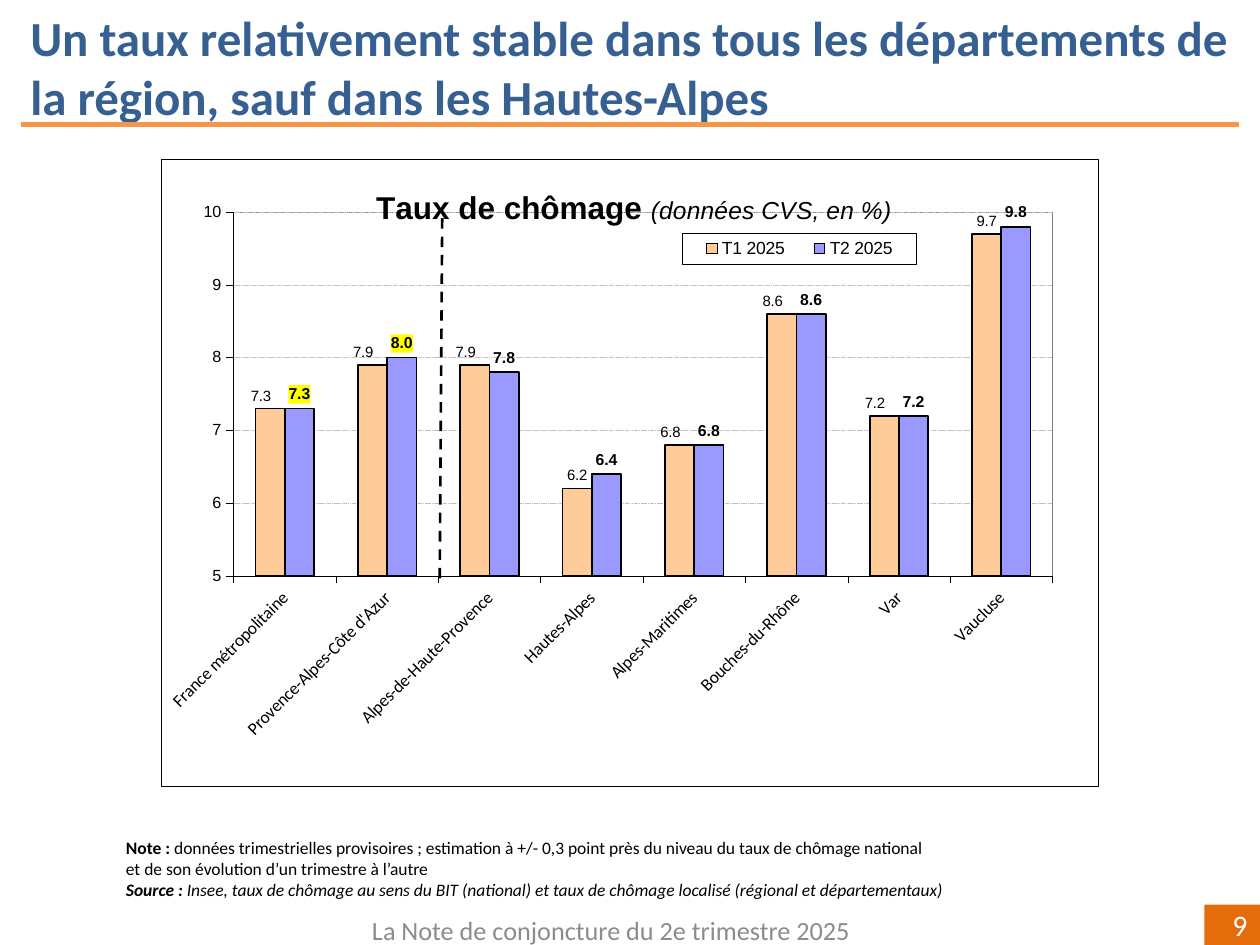
from lxml.etree import SubElement
from pptx import Presentation
from pptx.chart.data import CategoryChartData
from pptx.dml.color import RGBColor
from pptx.enum.chart import XL_CHART_TYPE as ChartType, XL_LABEL_POSITION as LabelPosition
from pptx.enum.chart import XL_LEGEND_POSITION as LegendPosition, XL_TICK_MARK as TickMark
from pptx.enum.dml import MSO_LINE as Dash
from pptx.enum.shapes import MSO_CONNECTOR as Connector, MSO_SHAPE as Shape
from pptx.enum.text import MSO_ANCHOR as Anchor, PP_ALIGN as Align
from pptx.oxml import parse_xml
from pptx.oxml.ns import nsdecls, qn
from pptx.util import Inches, Pt

BLUE = RGBColor(0x37, 0x60, 0x92)
ORANGE = RGBColor(0xF7, 0x96, 0x46)
DARK_ORANGE = RGBColor(0xE4, 0x6C, 0x0A)
PEACH = RGBColor(0xFF, 0xCC, 0x99)
LILAC = RGBColor(0x99, 0x99, 0xFF)
YELLOW = RGBColor(0xFF, 0xFF, 0x00)
GREY = RGBColor(0x8C, 0x8C, 0x8C)
GRID_GREY = RGBColor(0xC0, 0xC0, 0xC0)
FRAME_GREY = RGBColor(0x80, 0x80, 0x80)
WHITE = RGBColor(0xFF, 0xFF, 0xFF)
BLACK = RGBColor(0, 0, 0)

COLUMNS, ROWS = 100, 75
DEPARTMENTS = ["France métropolitaine", "Provence-Alpes-Côte d'Azur", "Alpes-de-Haute-Provence",
               "Hautes-Alpes", "Alpes-Maritimes", "Bouches-du-Rhône", "Var", "Vaucluse"]
FIRST_QUARTER = [7.3, 7.9, 7.9, 6.2, 6.8, 8.6, 7.2, 9.7]
SECOND_QUARTER = [7.3, 8.0, 7.8, 6.4, 6.8, 8.6, 7.2, 9.8]
SHIFTED_LABELS = [0, 1, 2, 4, 5, 6]
HIGHLIGHTED_LABELS = [0, 1]


def set_font(font, size, color=BLACK, name="Calibri", bold=False, italic=False):
    font.size, font.name, font.bold, font.italic = Pt(size), name, bold, italic
    font.color.rgb = color


def set_line(line, color, width, dash=None):
    line.color.rgb, line.width = color, Pt(width)
    if dash:
        line.dash_style = dash


def area_format(fill, border=None):
    line = (f'<a:ln w="3175"><a:solidFill><a:srgbClr val="{border}"/></a:solidFill></a:ln>'
            if border else "")
    return parse_xml(f'<c:spPr {nsdecls("c", "a")}><a:solidFill><a:srgbClr val="{fill}"/>'
                     f'</a:solidFill>{line}</c:spPr>')


def manual_layout(parent, index, **settings):
    for old in parent.findall(qn("c:layout")):
        parent.remove(old)
    layout = parse_xml(f'<c:layout {nsdecls("c")}><c:manualLayout/></c:layout>')
    for key, value in settings.items():
        SubElement(layout[0], qn(f"c:{key}")).set("val", str(value))
    parent.insert(index, layout)


class SlideBuilder:
    def __init__(self, presentation):
        self.column = presentation.slide_width / COLUMNS
        self.row = presentation.slide_height / ROWS
        self.slide = presentation.slides.add_slide(presentation.slide_layouts[5])
        self.shapes = self.slide.shapes

    def box(self, left, top, width, height):
        return (round(left * self.column), round(top * self.row),
                round(width * self.column), round(height * self.row))

    def fill_text(self, frame, paragraphs, size, color, align=Align.LEFT, anchor=Anchor.TOP):
        frame.word_wrap, frame.vertical_anchor = True, anchor
        for index, runs in enumerate(paragraphs):
            paragraph = frame.add_paragraph() if index else frame.paragraphs[0]
            paragraph.alignment = align
            for text, bold, italic in runs:
                run = paragraph.add_run()
                run.text = text
                set_font(run.font, size, color, bold=bold, italic=italic)

    def title(self, text, *place):
        shape = self.shapes.title
        shape.left, shape.top, shape.width, shape.height = self.box(*place)
        self.fill_text(shape.text_frame, [[(text, True, False)]], 28, BLUE)

    def text(self, paragraphs, size, color, *place, insets=None, **style):
        frame = self.shapes.add_textbox(*self.box(*place)).text_frame
        if insets:
            (frame.margin_left, frame.margin_top,
             frame.margin_right, frame.margin_bottom) = map(Inches, insets)
        self.fill_text(frame, paragraphs, size, color, **style)

    def badge(self, text, *place):
        shape = self.shapes.add_shape(Shape.RECTANGLE, *self.box(*place))
        shape.shadow.inherit = False
        shape.fill.solid()
        shape.fill.fore_color.rgb = DARK_ORANGE
        shape.line.fill.background()
        self.fill_text(shape.text_frame, [[(text, False, False)]], 17, WHITE,
                       Align.RIGHT, Anchor.MIDDLE)

    def line(self, start, end, color, width, dash=None):
        connector = self.shapes.add_connector(Connector.STRAIGHT, *self.box(*start, *end))
        set_line(connector.line, color, width, dash)
        SubElement(connector.element.spPr, qn("a:effectLst"))

    def chart(self, categories, values, *place):
        data = CategoryChartData(number_format="0.0")
        data.categories = categories
        for name, series_values in values.items():
            data.add_series(name, series_values)
        chart = self.shapes.add_chart(ChartType.COLUMN_CLUSTERED, *self.box(*place), data).chart
        set_font(chart.font, 8.5, name="Arial")
        chart.element.find(qn("c:chart")).addnext(area_format(WHITE, BLACK))
        plot_area = chart.element.find(".//" + qn("c:plotArea"))
        manual_layout(plot_area, 0, layoutTarget="inner", xMode="edge", yMode="edge",
                      x=0.077, y=0.085, w=0.874, h=0.58)
        plot_area.append(area_format(WHITE, FRAME_GREY))
        self.chart_title(chart)
        self.legend(chart)
        self.axes(chart)
        plot = chart.plots[0]
        plot.gap_width, plot.overlap, plot.vary_by_categories = 150, 0, False
        first, second = plot.series
        self.series(first, PEACH, 8.5, False)
        self.series(second, LILAC, 9, True)
        for index in SHIFTED_LABELS:
            label = self.point_label(chart, first, index, 8.5, False)
            manual_layout(label, 1, x=-0.01, y=0)
        for index in HIGHLIGHTED_LABELS:
            label = self.point_label(chart, second, index, 9, True)
            label.find(qn("c:txPr")).addprevious(area_format(YELLOW))

    def chart_title(self, chart):
        paragraph = chart.chart_title.text_frame.paragraphs[0]
        for text, size, bold in [("Taux de chômage ", 18, True), ("(données CVS, en %)", 14, False)]:
            run = paragraph.add_run()
            run.text = text
            set_font(run.font, size, name="Arial", bold=bold, italic=not bold)
        title = chart.element.find(".//" + qn("c:title"))
        title.find(qn("c:overlay")).set("val", "1")
        manual_layout(title, 1, xMode="edge", yMode="edge", x=0.225, y=0.04)

    def legend(self, chart):
        chart.has_legend = True
        chart.legend.position, chart.legend.include_in_layout = LegendPosition.RIGHT, False
        set_font(chart.legend.font, 10, name="Arial")
        legend = chart.element.find(".//" + qn("c:legend"))
        manual_layout(legend, 1, xMode="edge", yMode="edge", x=0.556, y=0.118, w=0.25, h=0.05)
        legend.find(qn("c:overlay")).addnext(area_format(WHITE, BLACK))

    def axes(self, chart):
        for axis, size, name in [(chart.category_axis, 10, "Calibri"), (chart.value_axis, 9.2, "Arial")]:
            axis.major_tick_mark, axis.minor_tick_mark = TickMark.OUTSIDE, TickMark.NONE
            set_font(axis.tick_labels.font, size, name=name)
            set_line(axis.format.line, BLACK, 0.25)
        category_axis = chart.element.find(".//" + qn("c:catAx"))
        category_axis.find(".//" + qn("a:bodyPr")).set("rot", "-2700000")
        axis = chart.value_axis
        axis.minimum_scale, axis.maximum_scale, axis.major_unit = 5, 10, 1
        axis.tick_labels.number_format, axis.tick_labels.number_format_is_linked = "0", False
        set_line(axis.major_gridlines.format.line, GRID_GREY, 0.25, Dash.SQUARE_DOT)

    def series(self, series, color, size, bold):
        series.format.fill.solid()
        series.format.fill.fore_color.rgb = color
        set_line(series.format.line, BLACK, 1)
        labels = series.data_labels
        labels.show_value, labels.position = True, LabelPosition.OUTSIDE_END
        labels.number_format, labels.number_format_is_linked = "0.0", False
        set_font(labels.font, size, name="Arial", bold=bold)

    def point_label(self, chart, series, index, size, bold):
        label = series.points[index].data_label
        set_font(label.font, size, name="Arial", bold=bold)
        label.position = LabelPosition.OUTSIDE_END
        element = chart.element.xpath(
            f'.//c:ser[c:idx/@val="{series.index}"]//c:dLbl[c:idx/@val="{index}"]')[0]
        number_format = parse_xml(f'<c:numFmt {nsdecls("c")} formatCode="0.0" sourceLinked="0"/>')
        element.find(qn("c:txPr")).addprevious(number_format)
        return element


def main():
    presentation = Presentation()
    presentation.slide_width, presentation.slide_height = Inches(10), Inches(7.5)
    builder = SlideBuilder(presentation)
    builder.title("Un taux relativement stable dans tous les départements de la région, "
                  "sauf dans les Hautes-Alpes", 1.4, 0.1, 97.2, 10.4)
    builder.line((1.7, 9.9), (98.3, 9.9), ORANGE, 3)
    builder.badge("9", 95.6, 71.8, 4.4, 3.2)
    builder.text([[("La Note de conjoncture du 2e trimestre 2025", False, False)]], 15, GREY,
                 24.1, 71.8, 48.8, 4, align=Align.CENTER, anchor=Anchor.MIDDLE)
    builder.text([
        [("Note : ", True, False),
         ("données trimestrielles provisoires ; estimation à +/- 0,3 point près du niveau "
          "du taux de chômage national", False, False)],
        [("et de son évolution d’un trimestre à l’autre", False, False)],
        [("Source : ", True, True),
         ("Insee, taux de chômage au sens du BIT (national) et taux de chômage localisé "
          "(régional et départementaux)", False, True)],
    ], 10, BLACK, 9.8, 66.1, 68.3, 5.3, insets=(0.02, 0.03, 0, 0))
    builder.chart(DEPARTMENTS, {"T1 2025": FIRST_QUARTER, "T2 2025": SECOND_QUARTER},
                  12.8, 12.6, 74.4, 49.8)
    builder.line((34.9, 45.9), (35.1, 17), BLACK, 1.5, Dash.DASH)
    presentation.save("out.pptx")


if __name__ == "__main__":
    main()
